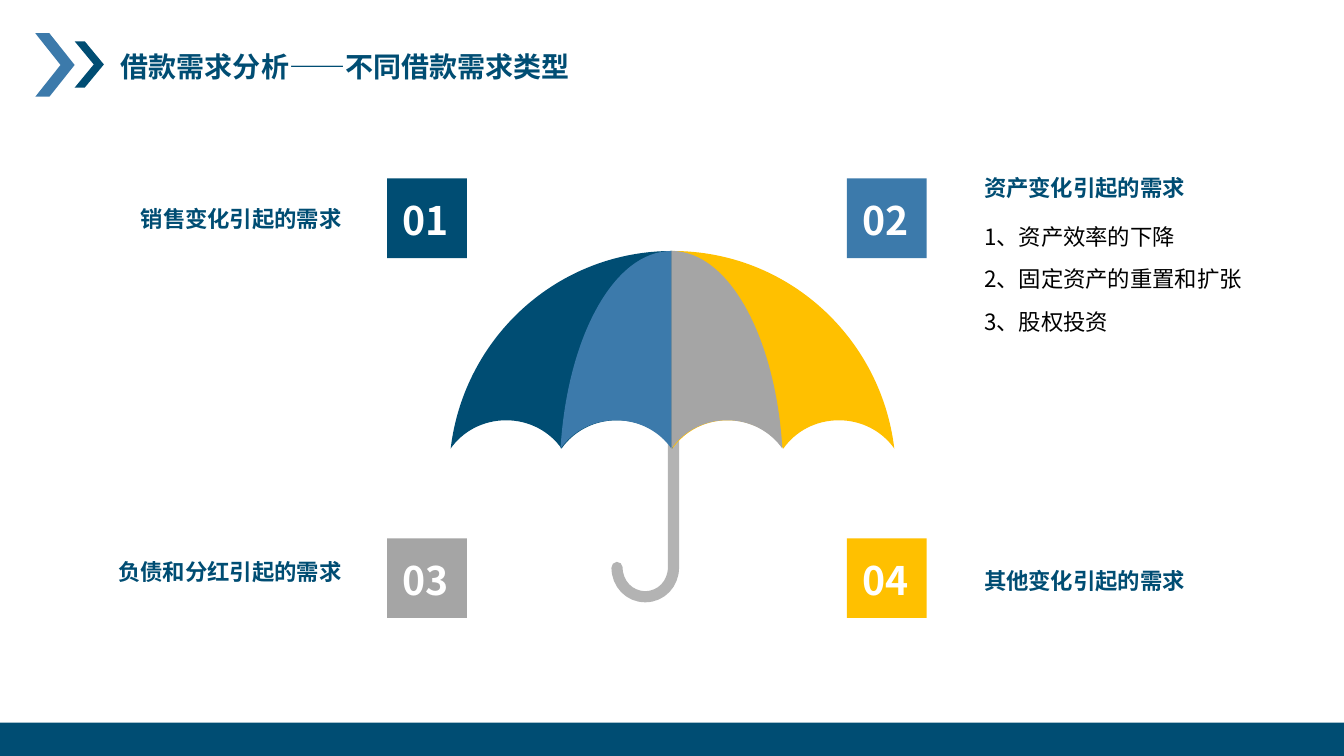
from lxml import etree
from pptx import Presentation
from pptx.dml.color import RGBColor
from pptx.enum.shapes import MSO_SHAPE
from pptx.enum.text import MSO_ANCHOR, MSO_AUTO_SIZE, PP_ALIGN
from pptx.oxml.ns import qn
from pptx.util import Inches, Pt

NAVY = RGBColor(0x00, 0x4D, 0x73)
BLUE = RGBColor(0x3C, 0x7A, 0xAB)
GREY = RGBColor(0xA5, 0xA5, 0xA5)
YELLOW = RGBColor(0xFF, 0xC0, 0x00)
HANDLE_GREY = RGBColor(0xB3, 0xB3, 0xB3)
WHITE = RGBColor(0xFF, 0xFF, 0xFF)
BLACK = RGBColor(0x00, 0x00, 0x00)
LEFT, CENTER, RIGHT = PP_ALIGN.LEFT, PP_ALIGN.CENTER, PP_ALIGN.RIGHT
TOP, MIDDLE = MSO_ANCHOR.TOP, MSO_ANCHOR.MIDDLE
GROW = MSO_AUTO_SIZE.SHAPE_TO_FIT_TEXT
CJK = "Noto Sans CJK SC"

prs = Presentation()
prs.slide_width, prs.slide_height = Inches(13.33), Inches(7.5)
slide = prs.slides.add_slide(prs.slide_layouts[6])


def add_outline(start, segments, close=True):
    """Draw segments: one point is a line, three points are a Bezier curve."""
    builder = slide.shapes.build_freeform(Inches(start[0]), Inches(start[1]))
    builder.add_line_segments([(Inches(s[-1][0]), Inches(s[-1][1])) for s in segments],
                              close=close)
    outline = builder.convert_to_shape()
    outline.shadow.inherit = False
    outline.line.fill.background()
    # Turn the lines that have control points into curves
    for line, segment in zip(list(outline._element.iter(qn("a:lnTo"))), segments):
        if len(segment) == 3:
            line.clear()
            curve = etree.Element(qn("a:cubicBezTo"))
            for x, y in segment:
                etree.SubElement(curve, qn("a:pt"), x=str(Inches(x) - outline.left),
                                 y=str(Inches(y) - outline.top))
            line.getparent().replace(line, curve)
    return outline


def add_text(box, lines, size, color, font=CJK, bold=True, align=LEFT, anchor=TOP,
             inset=0.11, side_inset=0, spacing=None, before=None, fit=None):
    label = slide.shapes.add_textbox(*map(Inches, box))
    frame = label.text_frame
    frame.text = "\n".join(lines)
    frame.word_wrap = True
    frame.auto_size = fit
    frame.vertical_anchor = anchor
    frame.margin_left = frame.margin_right = Inches(side_inset)
    frame.margin_top = frame.margin_bottom = Inches(inset)
    for paragraph in frame.paragraphs:
        paragraph.alignment = align
        paragraph.line_spacing = spacing
        paragraph.space_before = before
        run_font = paragraph.runs[0].font
        run_font.name, run_font.size, run_font.bold = font, Pt(size), bold
        run_font.color.rgb = color
        east_asian = run_font._element.makeelement(qn("a:ea"), {"typeface": CJK})
        run_font._element.find(qn("a:latin")).addnext(east_asian)


# Title chevrons: left, top, width, height, arm width
for x, y, w, h, arm, color in [(0.35, 0.33, 0.39, 0.63, 0.14, BLUE),
                               (0.74, 0.41, 0.29, 0.46, 0.1, NAVY)]:
    chevron = add_outline((x, y), [[(x + arm, y)], [(x + w, y + h / 2)], [(x + arm, y + h)],
                                   [(x, y + h)], [(x + w - arm, y + h / 2)]])
    chevron.fill.solid()
    chevron.fill.fore_color.rgb = color

# Footer band
footer = slide.shapes.add_shape(MSO_SHAPE.RECTANGLE, 0, Inches(7.17), prs.slide_width, Inches(0.33))
footer.shadow.inherit = False
footer.fill.solid()
footer.fill.fore_color.rgb = NAVY
footer.line.fill.background()

# Umbrella handle
handle = add_outline((6.12, 5.63), [[(6.12, 5.79), (6.24, 5.92), (6.4, 5.92)],
                                    [(6.56, 5.92), (6.68, 5.79), (6.68, 5.63)],
                                    [(6.68, 3.38)]], close=False)
handle.fill.background()
handle.line.color.rgb = HANDLE_GREY
handle.line.width = Pt(8)
handle.line._get_or_add_ln().set("cap", "rnd")

# Umbrella canopy: each half has an outer panel of two scallops and an inner panel of one
PEAK, HEM, ARCH, SCALLOP = 2.49, 4.45, 4.17, 1.1
for mid, scallops, side, color in [(6.67, 2, 1, YELLOW), (6.67, 2, -1, NAVY),
                                   (6.66, 1, -1, BLUE), (6.66, 1, 1, GREY)]:
    reach = side * scallops * SCALLOP
    panel = [[(mid + reach * 0.52, PEAK), (mid + reach * 0.94, 3.35), (mid + reach, HEM)]]
    for n in range(scallops, 0, -1):
        edge = mid + side * n * SCALLOP
        panel.append([(edge - side * 0.12, 4.28), (edge - side * 0.32, ARCH),
                      (edge - side * 0.55, ARCH)])
        panel.append([(edge - side * 0.78, ARCH), (edge - side * 0.98, 4.28),
                      (edge - side * SCALLOP, HEM)])
    canopy = add_outline((mid, PEAK), panel)
    canopy.fill.solid()
    canopy.fill.fore_color.rgb = color

# Numbered squares with their headings
demands = [
    ("01", 3.84, 1.77, NAVY, "销售变化引起的需求", (1.27, 1.93, 2.12, 0.45), RIGHT, None),
    ("02", 8.4, 1.77, BLUE, "资产变化引起的需求", (9.76, 1.62, 2.27, 0.45), LEFT, None),
    ("03", 3.84, 5.34, GREY, "负债和分红引起的需求", (0.82, 5.43, 2.57, 0.45), RIGHT, None),
    ("04", 8.4, 5.34, YELLOW, "其他变化引起的需求", (9.76, 5.46, 2.5, 0.55), LEFT, 1.2),
]
for number, x, y, color, heading, heading_box, align, spacing in demands:
    add_text(heading_box, [heading], 16, NAVY, font="Lato", align=align, spacing=spacing)
    square = slide.shapes.add_shape(MSO_SHAPE.ROUNDED_RECTANGLE, Inches(x), Inches(y),
                                    Inches(0.79), Inches(0.79))
    square.adjustments[0] = 0
    square.shadow.inherit = False
    square.fill.solid()
    square.fill.fore_color.rgb = color
    square.line.fill.background()
    add_text((x + 0.06, y + 0.1, 0.64, 0.53), [number], 28, WHITE,
             align=CENTER, anchor=MIDDLE, spacing=1.2)

# Details of the asset demand
add_text((9.76, 2.16, 3.06, 1.96), ["1、资产效率的下降", "2、固定资产的重置和扩张", "3、股权投资"],
         16, BLACK, bold=False, inset=0, spacing=1.2, before=Pt(7.4))

# Title
add_text((1.1, 0.44, 4.94, 0.44), ["借款需求分析——不同借款需求类型"], 20, NAVY,
         inset=0.05, side_inset=0.1, fit=GROW)

prs.save("out.pptx")
